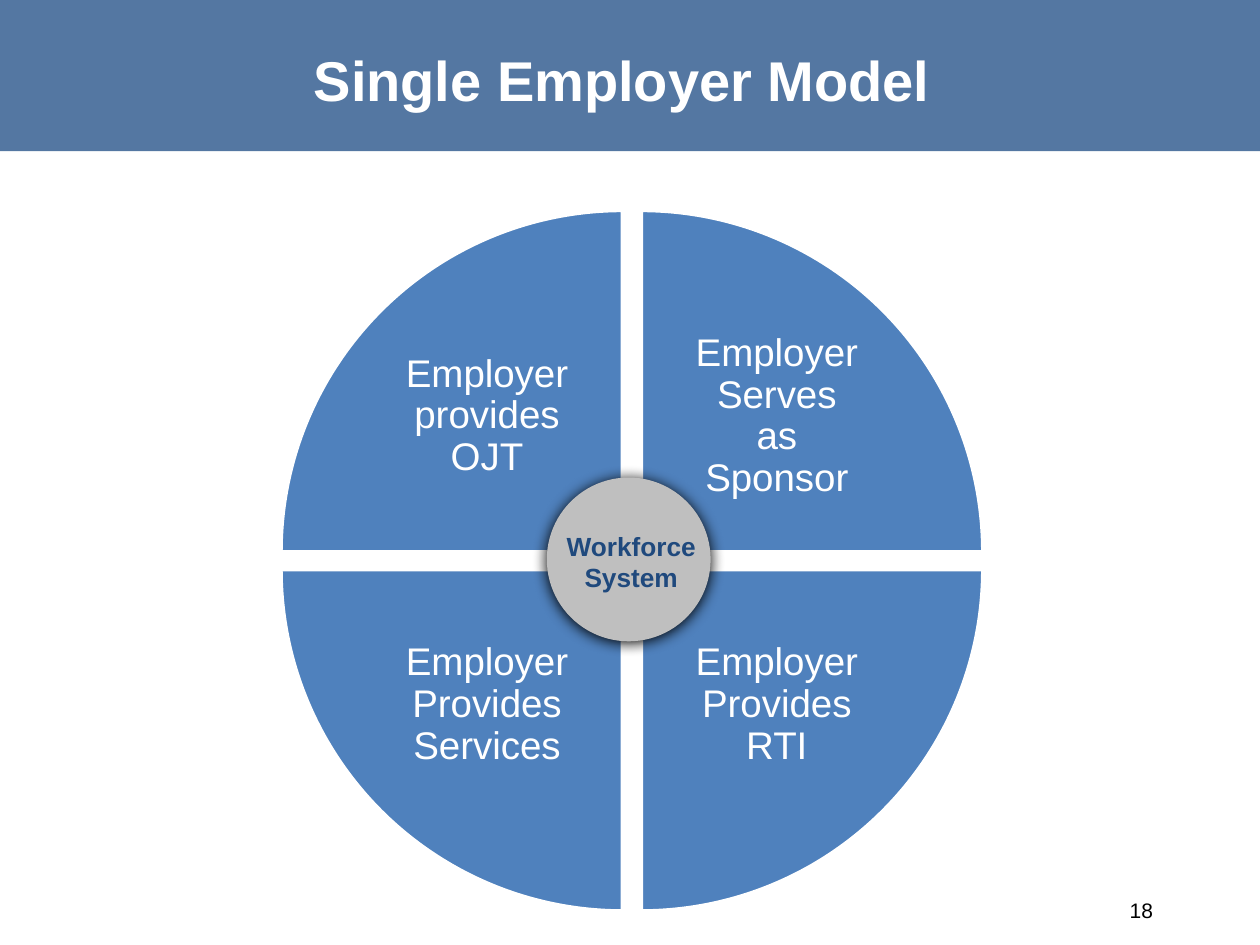
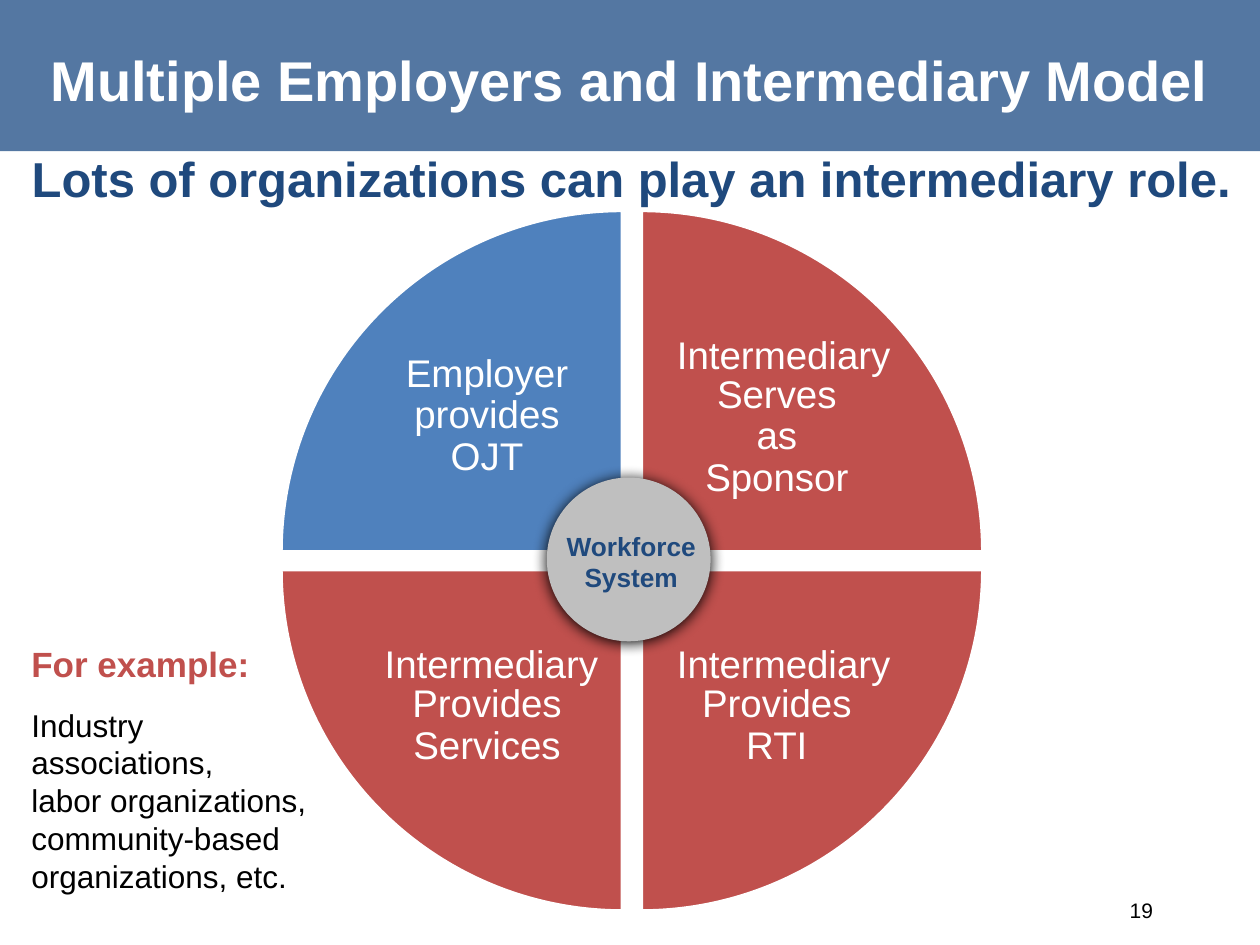
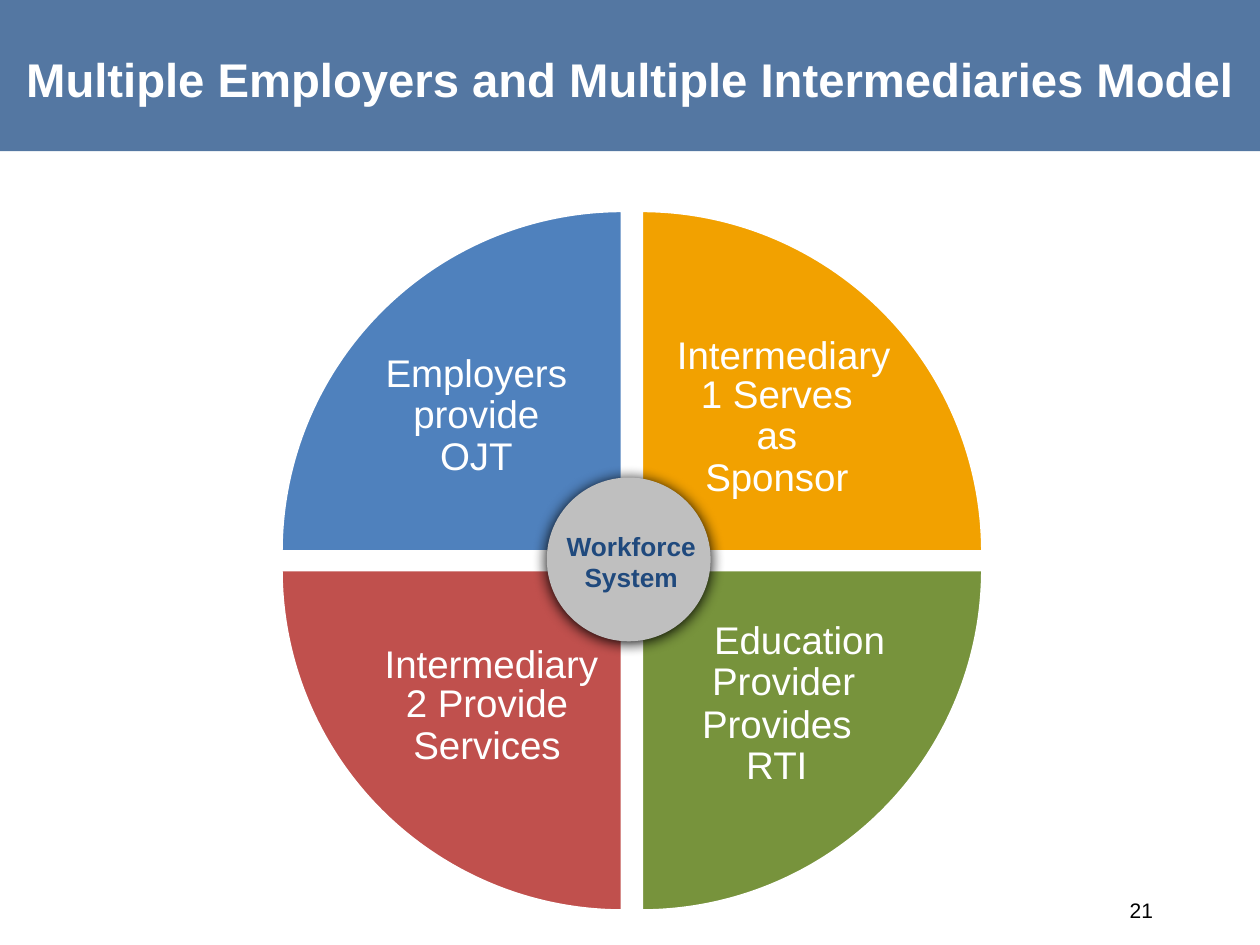
import dataclasses
import typing

import lxml.etree
import pptx
import pptx.dml.color
import pptx.enum.shapes
import pptx.enum.text
import pptx.oxml
import pptx.oxml.ns
import pptx.util

COLS, ROWS = 100, 75
WIDE, HIGH = pptx.util.Inches(10), pptx.util.Inches(7.5)
SHAPE = pptx.enum.shapes.MSO_SHAPE
ALIGN = pptx.enum.text.PP_ALIGN
ANCHOR = pptx.enum.text.MSO_ANCHOR
FIT = pptx.enum.text.MSO_AUTO_SIZE

BAND, NAVY, GRAY = "376092", "1F497D", "BFBFBF"
BLUE, RED, GOLD, GREEN = "4F81BD", "C0504D", "F2A100", "77933C"
WHITE, BLACK = "FFFFFF", "000000"

SIDE, TEXT = 27.1, 19.2
OUTER, INNER = 0.17, 0.4
TURNS = {(0, 0): 0, (1, 0): 90, (1, 1): 180, (0, 1): 270}


class Box(typing.NamedTuple):
    col: float
    row: float
    wide: float
    high: float


@dataclasses.dataclass
class Style:
    size: float
    color: str
    bold: bool = False
    align: typing.Any = ALIGN.CENTER
    leading: float = 1.0
    after: float = 0
    indent: float = 0


@dataclasses.dataclass
class Wedge:
    text: str
    color: str = BLUE
    head: str = ""
    lines: int = 0
    left: float = OUTER
    rise: float = 0
    style: typing.Optional[Style] = None


@dataclasses.dataclass
class Page:
    title: str
    number: str
    wedges: list[Wedge]
    size: float = 32
    lead: str = ""
    cases: tuple[str, ...] = ()


LABEL = Style(22, WHITE, leading=0.9)
HEAD = Style(22, WHITE)
SHIFT = Style(22, WHITE, leading=0.9, indent=0.25)
HUB = Style(15, NAVY, True)
LEAD = Style(28, NAVY, True)
CASE = Style(20, RED, True, ALIGN.LEFT, after=12)
ITEM = Style(18, BLACK, align=ALIGN.LEFT)
NUMBER = Style(12, BLACK, align=ALIGN.RIGHT)

PAGES = [
    Page("Single Employer Model ", "18", [
        Wedge("Employer provides OJT"),
        Wedge("Employer Serves as Sponsor"),
        Wedge("Employer Provides RTI"),
        Wedge("Employer Provides Services"),
    ]),
    Page("Multiple Employers and Intermediary Model", "19", [
        Wedge("Employer provides OJT"),
        Wedge("Serves as Sponsor", RED, "Intermediary", 1),
        Wedge("Provides RTI", RED, "Intermediary", 1),
        Wedge("Provides Services", RED, "Intermediary", 1),
    ], lead="Lots of organizations can play an intermediary role.",
        cases=("For example:", "Industry\nassociations,",
               "labor organizations,", "community-based",
               "organizations, etc.")),
    Page("Multiple Employers and Multiple Intermediaries Model", "21", [
        Wedge("Employers provide OJT", left=0),
        Wedge("1 Serves as Sponsor", GOLD, "Intermediary", 1),
        Wedge("Provides RTI", GREEN, "Education Provider", 2,
              rise=1.5, style=SHIFT),
        Wedge("2 Provide Services", RED, "Intermediary", 1),
    ], size=27),
]


def rgb(code: str) -> pptx.dml.color.RGBColor:
    return pptx.dml.color.RGBColor.from_string(code)


def apply(target: typing.Any, values: dict[str, typing.Any]) -> None:
    for name, value in values.items():
        setattr(target, name, value)


def span(box: Box) -> list[int]:
    across, down = WIDE / COLS, HIGH / ROWS
    return [round(box.col * across), round(box.row * down),
            round(box.wide * across), round(box.high * down)]


def draw(slide: typing.Any, kind: typing.Any, box: Box, fill: str) -> typing.Any:
    shape = slide.shapes.add_shape(kind, *span(box))
    shape.shadow.inherit = False
    shape.fill.solid()
    shape.fill.fore_color.rgb = rgb(fill)
    shape.line.fill.background()
    return shape


def fill_text(frame: typing.Any, rows: list[tuple[str, Style]],
              anchor: typing.Any, pads: tuple[float, ...]) -> None:
    sides = ("margin_left", "margin_top", "margin_right", "margin_bottom")
    apply(frame, {"word_wrap": True, "auto_size": FIT.NONE,
                  "vertical_anchor": anchor})
    apply(frame, {side: pptx.util.Inches(pad) for side, pad in zip(sides, pads)})
    for index, (text, style) in enumerate(rows):
        para = frame.add_paragraph() if index else frame.paragraphs[0]
        para.text = text
        apply(para, {"alignment": style.align, "line_spacing": style.leading,
                     "space_before": pptx.util.Pt(0),
                     "space_after": pptx.util.Pt(style.after)})
        if style.indent:
            para._p.get_or_add_pPr().set(
                "indent", str(pptx.util.Inches(style.indent)))
        for run in para.runs:
            apply(run.font, {"name": "Arial", "bold": style.bold,
                             "size": pptx.util.Pt(style.size)})
            run.font.color.rgb = rgb(style.color)


def write(slide: typing.Any, box: Box, rows: list[tuple[str, Style]],
          anchor: typing.Any = ANCHOR.MIDDLE,
          pads: tuple[float, ...] = (0.1, 0.05, 0.1, 0.05)) -> None:
    frame = slide.shapes.add_textbox(*span(box)).text_frame
    fill_text(frame, rows, anchor, pads)


def add_band(slide: typing.Any) -> None:
    band = draw(slide, SHAPE.RECTANGLE, Box(0, 0, COLS, 12), BAND)
    color = band._element.find(".//" + pptx.oxml.ns.qn("a:srgbClr"))
    lxml.etree.SubElement(color, pptx.oxml.ns.qn("a:alpha"), val="85000")
    slide.slide_layout.shapes._spTree.insert(2, band._element)


def add_wedge(slide: typing.Any, wedge: Wedge, col: int, row: int) -> None:
    left, top = 22.3 + 28.6 * col, 16.7 + 28.5 * row
    shape = draw(slide, SHAPE.PIE_WEDGE, Box(left, top, SIDE, SIDE), wedge.color)
    shape.rotation = TURNS[col, row]
    shape.line.color.rgb = rgb(WHITE)
    shape.line.width = pptx.util.Pt(2)
    slack = SIDE - TEXT
    box = Box(left + slack * (1 - col), top + slack * (1 - row), TEXT, TEXT)
    pads = (INNER if col else wedge.left,
            (INNER if row else OUTER) + 0.33 * wedge.lines,
            OUTER if col else INNER, OUTER if row else INNER)
    write(slide, box, [(wedge.text, LABEL)], pads=pads)


def add_head(slide: typing.Any, wedge: Wedge, col: int, row: int) -> None:
    box = Box(30.1 + 23.2 * col, 26.3 + 24.5 * row - wedge.rise, 17.8, 3.7)
    write(slide, box, [(wedge.head, wedge.style or HEAD)], ANCHOR.TOP, (0,) * 4)


def add_hub(slide: typing.Any) -> None:
    hub = draw(slide, SHAPE.OVAL, Box(43.4, 37.9, 13, 13), GRAY)
    glow = hub._element.spPr.find(pptx.oxml.ns.qn("a:effectLst"))
    glow.append(pptx.oxml.parse_xml(
        f'<a:outerShdw {pptx.oxml.ns.nsdecls("a")} blurRad="107950" '
        'dist="12700" dir="5400000" algn="ctr" rotWithShape="0">'
        f'<a:srgbClr val="{BLACK}"/></a:outerShdw>'))
    write(slide, Box(41.6, 41.5, 17, 6.1),
          [("Workforce", HUB), ("System", HUB)], pads=(0,) * 4)


def add_page(deck: typing.Any, page: Page) -> typing.Any:
    slide = deck.slides.add_slide(deck.slide_layouts[5])
    title = slide.shapes.title
    apply(title, dict(zip(("left", "top", "width", "height"),
                          span(Box(0, 1.5, COLS, 9.5)))))
    fill_text(title.text_frame, [(page.title, Style(page.size, WHITE, True))],
              ANCHOR.MIDDLE, (0.1, 0.05, 0.1, 0.05))
    for wedge, (col, row) in zip(page.wedges, TURNS):
        add_wedge(slide, wedge, col, row)
    write(slide, Box(69.2, 70.2, 23.3, 4), [(page.number, NUMBER)])
    add_hub(slide)
    for wedge, (col, row) in zip(page.wedges, TURNS):
        if wedge.head:
            add_head(slide, wedge, col, row)
    if page.lead:
        write(slide, Box(0.2, 11.3, 99.8, 5.7), [(page.lead, LEAD)], ANCHOR.TOP)
    if page.cases:
        rows = [(text, ITEM if index else CASE)
                for index, text in enumerate(page.cases)]
        write(slide, Box(1.5, 50.5, 30.1, 21.2), rows, ANCHOR.TOP)
    return slide


def main() -> None:
    deck = pptx.Presentation()
    apply(deck, {"slide_width": WIDE, "slide_height": HIGH})
    slides = [add_page(deck, page) for page in PAGES]
    add_band(slides[0])
    deck.save("out.pptx")


if __name__ == "__main__":
    main()
